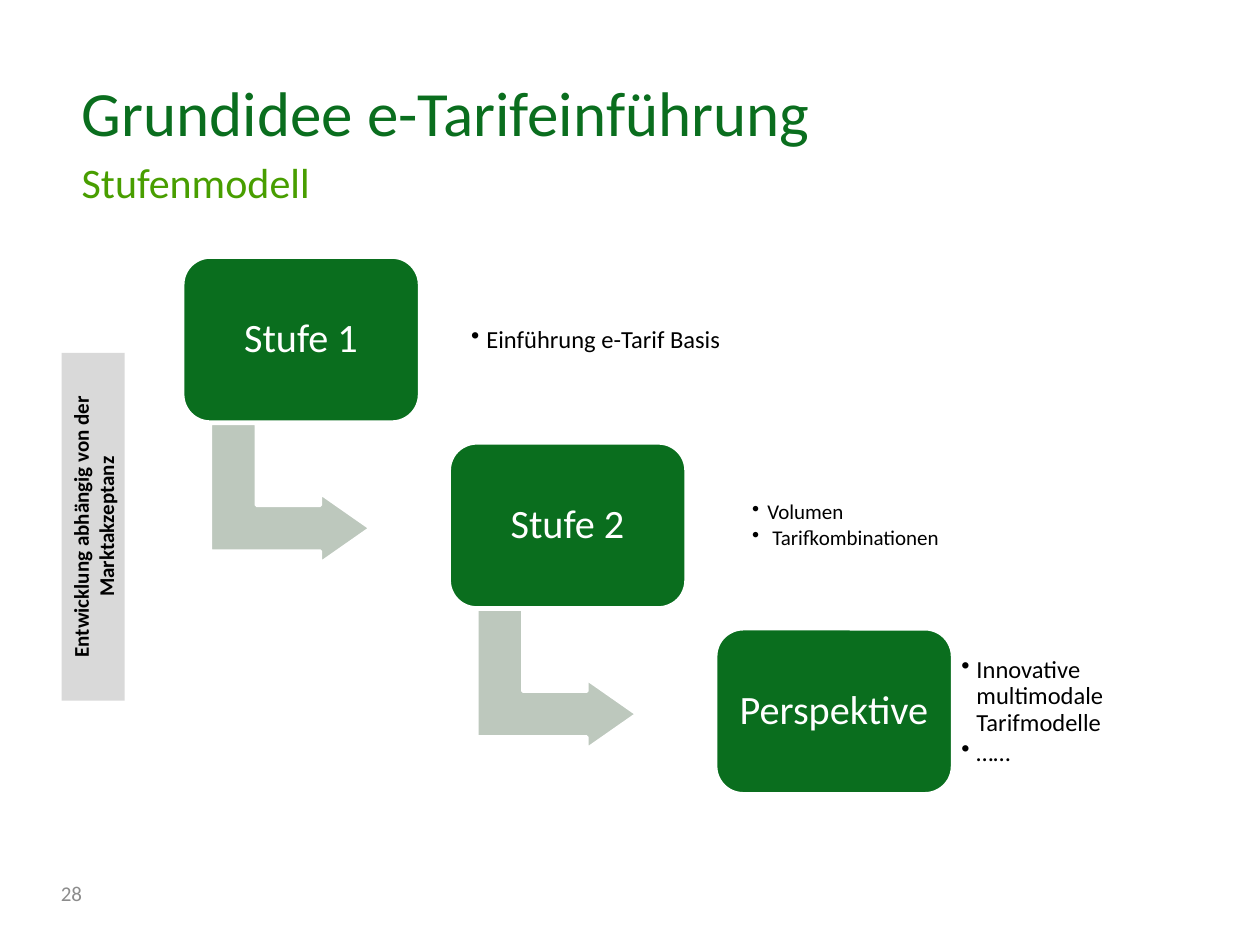
from pptx import Presentation
from pptx.dml.color import RGBColor
from pptx.enum.shapes import MSO_SHAPE
from pptx.enum.text import MSO_ANCHOR, MSO_AUTO_SIZE, PP_ALIGN
from pptx.oxml.ns import qn
from pptx.util import Inches, Pt
from lxml import etree

LEFT, CENTER, RIGHT = PP_ALIGN.LEFT, PP_ALIGN.CENTER, PP_ALIGN.RIGHT
TOP, MIDDLE = MSO_ANCHOR.TOP, MSO_ANCHOR.MIDDLE
FIXED_SIZE = MSO_AUTO_SIZE.NONE
ROUNDED, BENT_ARROW, RECTANGLE = (
    MSO_SHAPE.ROUNDED_RECTANGLE, MSO_SHAPE.BENT_UP_ARROW, MSO_SHAPE.RECTANGLE)

FONT = "Calibri"
GREEN, LIGHT_GREEN, SAGE = "0A6E1E", "489E00", "BDC8BD"
WHITE, BLACK, PALE_GRAY, GRAY = "FFFFFF", "000000", "D9D9D9", "8C8C8C"

HEAD_LEFT, HEAD_WIDTH = 0.55, 8.91
STAIR_LEFT, STAIR_TOP = 1.45, 2.04
STEP_X, STEP_Y = 2.115, 1.475
STAGE_WIDTH, STAGE_HEIGHT = 1.88, 1.31
ARROW_WIDTH, ARROW_HEIGHT = 1.11, 1.27
NOTE_DROP, NOTE_HEIGHT = 0.13, 1.06
HANG, WIDE_HANG = 0.12, 0.16

# label, note left, note width, note inset, note size, notes with hanging indent
STAGES = [
    ("Stufe 1", 3.68, 3.69, 0.06, 14, [("Einführung e-Tarif Basis", HANG)]),
    ("Stufe 2", 5.92, 1.84, 0.05, 12,
     [("Volumen", HANG), ("Tarifkombinationen", WIDE_HANG)]),
    ("Perspektive", 7.56, 1.36, 0.07, 14,
     [("Innovative multimodale Tarifmodelle", HANG), ("……", HANG)]),
]


def color(value):
    return RGBColor.from_string(value)


def place(shape, left, top, width, height):
    shape.left, shape.top = Inches(left), Inches(top)
    shape.width, shape.height = Inches(width), Inches(height)


def set_frame(shape, anchor=TOP, insets=(0.1, 0.05)):
    frame = shape.text_frame
    frame.word_wrap = True
    frame.auto_size = FIXED_SIZE
    frame.vertical_anchor = anchor
    frame.margin_left = frame.margin_right = Inches(insets[0])
    frame.margin_top = frame.margin_bottom = Inches(insets[1])
    return frame


def write(para, text, size=12, ink=BLACK, bold=False, align=LEFT,
          spacing=None, after=0):
    span = para.add_run()
    span.text = text
    span.font.name, span.font.size, span.font.bold = FONT, Pt(size), bold
    span.font.color.rgb = color(ink)
    para.alignment = align
    para.space_after = Pt(after)
    if spacing:
        para.line_spacing = spacing


def add_bullet(para, hang):
    properties = para._p.get_or_add_pPr()
    properties.set("marL", str(Inches(hang)))
    properties.set("indent", str(-Inches(hang)))
    etree.SubElement(properties, qn("a:buChar")).set("char", "•")


def add_text_box(page, box, text, anchor=TOP, **style):
    shape = page.shapes.add_textbox(*map(Inches, box))
    write(set_frame(shape, anchor).paragraphs[0], text, **style)


def add_shape(page, kind, box, fill, line=None, adjustments=(), rotation=0):
    shape = page.shapes.add_shape(kind, *map(Inches, box))
    shape.shadow.inherit = False
    shape.rotation = rotation
    shape.fill.solid()
    shape.fill.fore_color.rgb = color(fill)
    if line:
        shape.line.color.rgb = color(line)
        shape.line.width = Pt(2)
    else:
        shape.line.fill.background()
    for index, value in enumerate(adjustments):
        shape.adjustments[index] = value
    return shape


def add_title(page, text):
    title = page.shapes.title
    place(title, HEAD_LEFT, 0.53, HEAD_WIDTH, 0.66)
    write(set_frame(title).paragraphs[0], text, size=36, ink=GREEN)


def add_arrow(page, left, top):
    """Place an arrow that leads from the stage at left, top to the next one."""
    box = (left + 0.3, top + 1.24, ARROW_WIDTH, ARROW_HEIGHT)
    add_shape(page, BENT_ARROW, box, SAGE, WHITE, (0.328, 0.25, 0.358), 90)


def add_stage(page, left, top, label):
    box = (left, top, STAGE_WIDTH, STAGE_HEIGHT)
    stage = add_shape(page, ROUNDED, box, GREEN, WHITE, (0.167,))
    frame = set_frame(stage, MIDDLE, (0.1, 0.1))
    write(frame.paragraphs[0], label, size=23, ink=WHITE, align=CENTER,
          spacing=0.9, after=8)


def add_notes(page, box, notes, inset, size):
    shape = page.shapes.add_textbox(*map(Inches, box))
    frame = set_frame(shape, MIDDLE, (inset, inset))
    for index, (text, hang) in enumerate(notes):
        para = frame.add_paragraph() if index else frame.paragraphs[0]
        add_bullet(para, hang)
        write(para, text, size=size, spacing=0.9, after=0.15 * size)


def add_staircase(page):
    for index, (label, note_left, width, inset, size, notes) in enumerate(STAGES):
        left, top = STAIR_LEFT + index * STEP_X, STAIR_TOP + index * STEP_Y
        if index < len(STAGES) - 1:
            add_arrow(page, left, top)
        add_stage(page, left, top, label)
        note_box = (note_left, top + NOTE_DROP, width, NOTE_HEIGHT)
        add_notes(page, note_box, notes, inset, size)


def add_side_label(page, text):
    label = add_shape(page, RECTANGLE, (-0.64, 3.93, 2.76, 0.5), PALE_GRAY,
                      rotation=270)
    write(set_frame(label, MIDDLE).paragraphs[0], text, bold=True, align=CENTER)


def main():
    deck = Presentation()
    deck.slide_width, deck.slide_height = Inches(10), Inches(7.5)
    page = deck.slides.add_slide(deck.slide_layouts[5])
    add_title(page, "Grundidee e-Tarifeinführung")
    add_staircase(page)
    add_text_box(page, (0.2, 6.87, 0.55, 0.44), "28", MIDDLE, ink=GRAY,
                 align=RIGHT)
    add_text_box(page, (HEAD_LEFT, 1.19, HEAD_WIDTH, 0.41), "Stufenmodell",
                 size=24, ink=LIGHT_GREEN)
    add_side_label(page, "Entwicklung abhängig von der Marktakzeptanz")
    deck.save("out.pptx")


if __name__ == "__main__":
    main()
